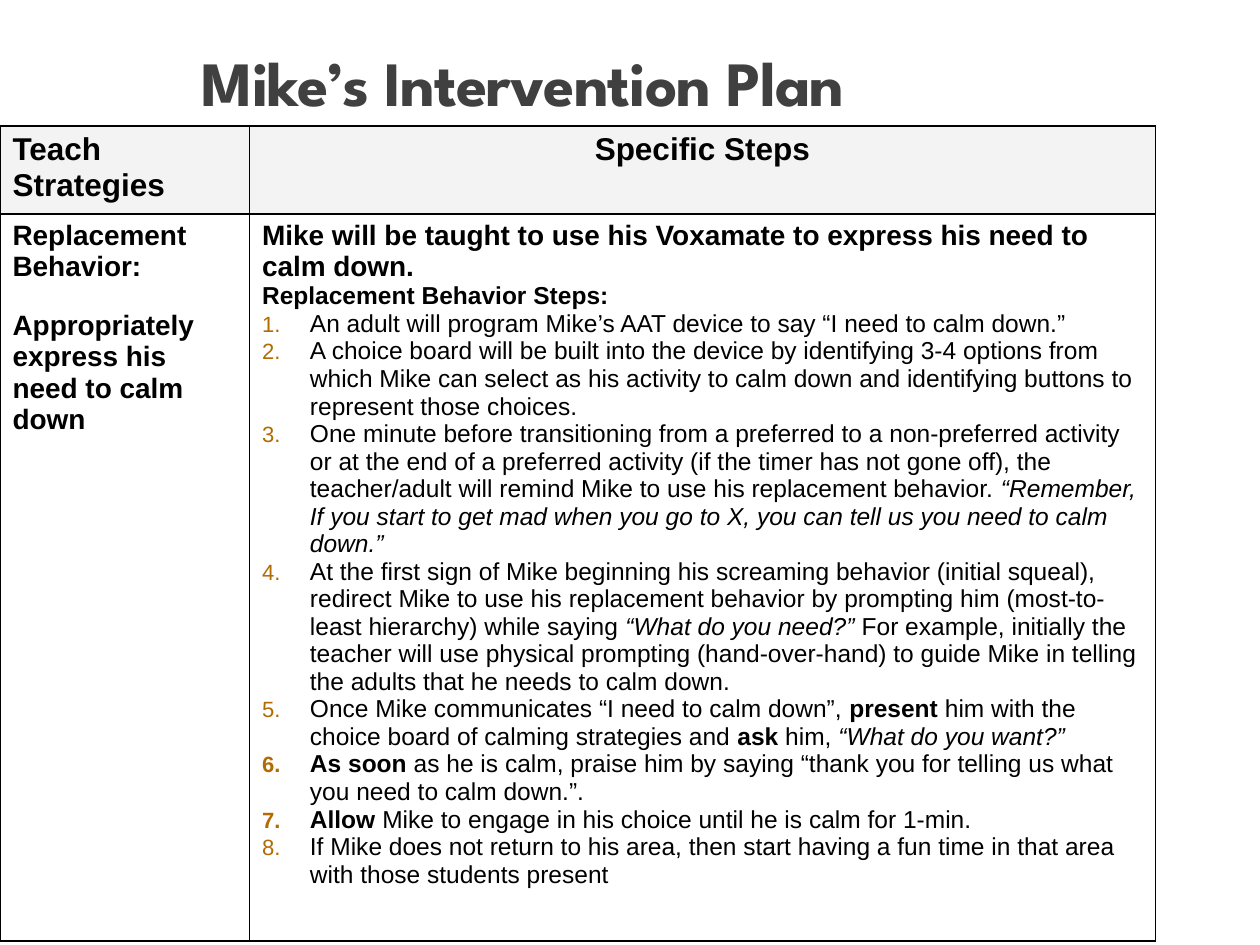
"""Build the intervention plan slide with its table of teaching steps."""
from dataclasses import dataclass

from lxml.etree import SubElement
from pptx import Presentation
from pptx.dml.color import RGBColor
from pptx.enum.text import MSO_ANCHOR, MSO_AUTO_SIZE, PP_ALIGN
from pptx.oxml.ns import qn
from pptx.util import Emu, Inches, Pt

WIDTH, HEIGHT = Inches(10), Inches(7.5)
COLUMNS = (0.198, 0.719)
ROWS = (0.7 / 7.5, 5.77 / 7.5)
BODY_FONT, TITLE_FONT = "Arial", "League Spartan"
BLACK, GREY, HEADER_FILL, NUMBER_COLOUR = "000000", "404040", "F3F3F3", "B26B02"


@dataclass(frozen=True)
class Span:
    text: str
    bold: bool = False
    italic: bool = False


@dataclass(frozen=True)
class Line:
    spans: tuple[Span, ...]
    size: int
    align: PP_ALIGN = PP_ALIGN.LEFT
    before: int = 0
    numbered: bool = False
    tabbed: bool = False


def heading(text: str, size: int, **options) -> Line:
    """Return a bold line of one span."""
    return Line((Span(text, bold=True),), size, **options)


def step(*spans: Span) -> Line:
    """Return a numbered step."""
    return Line(spans, 14, numbered=True, tabbed=True)


STEPS = (
    step(Span("An adult will program Mike’s AAT device to say “I need to calm down.”")),
    step(Span("A choice board will be built into the device by identifying 3-4 options from which "
              "Mike can select as his activity to calm down and identifying buttons to represent "
              "those choices.")),
    step(Span("One minute before transitioning from a preferred to a non-preferred activity or at "
              "the end of a preferred activity (if the timer has not gone off), the teacher/adult "
              "will remind Mike to use his replacement behavior. "),
         Span("“Remember, If you start to get mad when you go to X, you can tell us you need to "
              "calm down.”", italic=True)),
    step(Span("At the first sign of Mike beginning his screaming behavior (initial squeal), "
              "redirect Mike to use his replacement behavior by prompting him (most-to-least "
              "hierarchy) while saying "),
         Span("“What do you need?” ", italic=True),
         Span("For example, initially the teacher will use physical prompting (hand-over-hand) to "
              "guide Mike in telling the adults that he needs to calm down.")),
    step(Span("Once Mike communicates “I need to calm down”, "),
         Span("present ", bold=True),
         Span("him with the choice board of calming strategies and "),
         Span("ask", bold=True),
         Span(" him, "),
         Span("“What do you want?”", italic=True)),
    step(Span("As soon", bold=True),
         Span(" as he is calm, praise him by saying “thank you for telling us what you need to "
              "calm down.”.")),
    step(Span("Allow", bold=True),
         Span(" Mike to engage in his choice until he is calm for 1-min.")),
    step(Span("If Mike does not return to his area, then start having a fun time in that area with "
              "those students present")),
)

PLAN = (
    ((heading("Teach Strategies", 18),),
     (heading("Specific Steps", 18, align=PP_ALIGN.CENTER),)),
    ((heading("Replacement Behavior:", 16),
      heading("Appropriately express his need to calm down", 16, before=16)),
     (heading("Mike will be taught to use his Voxamate to express his need to calm down.", 16,
              tabbed=True),
      heading("Replacement Behavior Steps:", 14, tabbed=True),
      *STEPS)),
)


def colour(value: str) -> RGBColor:
    """Turn a hex string into a colour."""
    return RGBColor.from_string(value)


def add_marks(para, line: Line) -> None:
    """Add the numbering and tab stop of a line."""
    properties = para._p.get_or_add_pPr()
    if line.numbered:
        properties.set("marL", str(Inches(0.38)))
        properties.set("indent", str(-Inches(0.38)))
        tint = SubElement(properties, qn("a:buClr"))
        SubElement(tint, qn("a:srgbClr"), val=NUMBER_COLOUR)
        SubElement(properties, qn("a:buSzPct"), val="90000")
        SubElement(properties, qn("a:buFont"), typeface=BODY_FONT)
        SubElement(properties, qn("a:buAutoNum"), type="arabicPeriod")
    if line.tabbed:
        tabs = SubElement(properties, qn("a:tabLst"))
        SubElement(tabs, qn("a:tab"), pos=str(Inches(0.2)), algn="l")


def write_line(para, line: Line) -> None:
    """Write one formatted line into a paragraph."""
    para.alignment = line.align
    if line.before:
        para.space_before = Pt(line.before)
    add_marks(para, line)
    para.font.name = BODY_FONT
    para.font.size = Pt(line.size)
    para.font.color.rgb = colour(BLACK)
    for span in line.spans:
        run = para.add_run()
        run.text = span.text
        run.font.bold = span.bold
        run.font.italic = span.italic


def add_borders(cell) -> None:
    """Draw a thin line on all four sides of a cell."""
    properties = cell._tc.get_or_add_tcPr()
    for index, side in enumerate(("lnL", "lnR", "lnT", "lnB")):
        border = properties.makeelement(qn(f"a:{side}"), {"w": str(Pt(1))})
        fill = SubElement(border, qn("a:solidFill"))
        SubElement(fill, qn("a:srgbClr"), val=BLACK)
        properties.insert(index, border)


def fill_cell(cell, lines: tuple[Line, ...], is_header: bool) -> None:
    """Fill a cell with its lines, background and borders."""
    if is_header:
        cell.fill.solid()
        cell.fill.fore_color.rgb = colour(HEADER_FILL)
    else:
        cell.fill.background()
    add_borders(cell)
    frame = cell.text_frame
    for index, line in enumerate(lines):
        write_line(frame.add_paragraph() if index else frame.paragraphs[0], line)


def add_plan(page) -> None:
    """Add the table of strategies and steps."""
    frame = page.shapes.add_table(len(ROWS), len(COLUMNS), 0, Inches(1),
                                  Emu(int(WIDTH * sum(COLUMNS))), Emu(int(HEIGHT * sum(ROWS))))
    table = frame.table
    table.first_row = table.horz_banding = False
    for column, share in zip(table.columns, COLUMNS):
        column.width = Emu(int(WIDTH * share))
    for row, share in zip(table.rows, ROWS):
        row.height = Emu(int(HEIGHT * share))
    for row_index, cells in enumerate(PLAN):
        for column_index, lines in enumerate(cells):
            fill_cell(table.cell(row_index, column_index), lines, row_index == 0)


def set_title(page, text: str) -> None:
    """Place and format the title."""
    box = page.shapes.title
    box.left, box.top = Emu(int(WIDTH * 0.15)), Emu(HEIGHT // 30)
    box.width, box.height = Emu(int(WIDTH * 0.85)), Emu(HEIGHT // 10)
    frame = box.text_frame
    frame.auto_size = MSO_AUTO_SIZE.NONE
    frame.vertical_anchor = MSO_ANCHOR.BOTTOM
    para = frame.paragraphs[0]
    para.alignment = PP_ALIGN.LEFT
    para.line_spacing = 0.85
    para.font.name = TITLE_FONT
    para.font.size = Pt(36)
    para.font.bold = True
    para.font.color.rgb = colour(GREY)
    run = para.add_run()
    run.text = text
    run._r.get_or_add_rPr().set("spc", "-50")


def main() -> None:
    """Build and save the deck."""
    deck = Presentation()
    deck.slide_width, deck.slide_height = WIDTH, HEIGHT
    page = deck.slides.add_slide(deck.slide_layouts.get_by_name("Title Only"))
    set_title(page, "Mike’s Intervention Plan")
    add_plan(page)
    deck.save("out.pptx")


if __name__ == "__main__":
    main()
